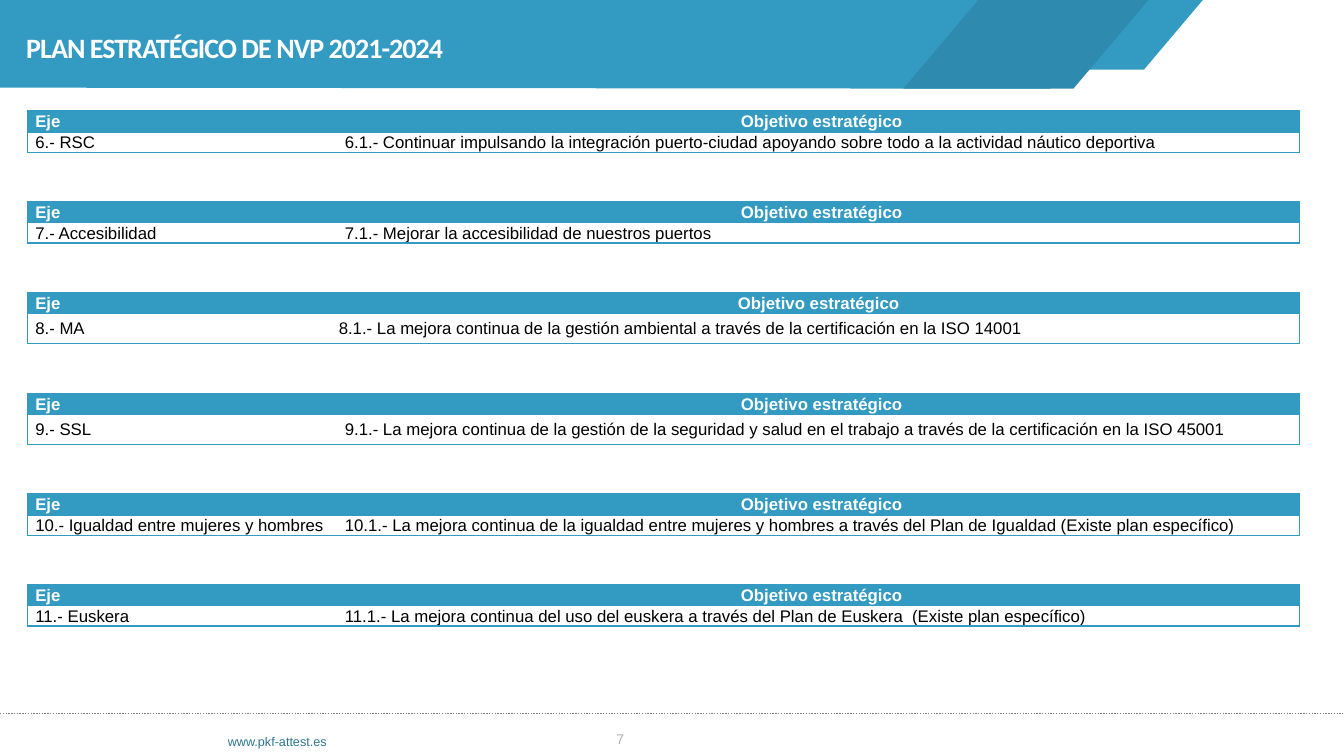
from lxml import etree
from pptx import Presentation
from pptx import util as u
from pptx.dml.color import RGBColor
from pptx.enum import dml, shapes, text
from pptx.oxml import ns

Inches = u.Inches
BLUE, DARK_BLUE, WHITE, BLACK = "339AC1", "2F8AAF", "FFFFFF", "000000"


def paint(fill, color):
    fill.solid()
    fill.fore_color.rgb = RGBColor.from_string(color)


def write(frame, words, color, align="LEFT", **font):
    para = frame.paragraphs[0]
    para.alignment = getattr(text.PP_ALIGN, align)
    span = para.add_run()
    span.text = words
    for key, value in font.items():
        setattr(span.font, key, value)
    paint(span.font.fill, color)
    return span


deck = Presentation()
deck.slide_width, deck.slide_height = Inches(13.33), Inches(7.5)
page = deck.slides.add_slide(deck.slide_layouts[5])

# Header band
builder = page.shapes.build_freeform(Inches(11.39), 0)
corners = [(10.41, 0.88), (-0.01, 0.87), (0, 0)]
builder.add_line_segments([(Inches(x), Inches(y)) for x, y in corners])
header = [(builder.convert_to_shape(), BLUE)]
for left, height, color in [(9.5, 0.69, BLUE), (8.96, 0.88, DARK_BLUE)]:
    slant = page.shapes.add_shape(shapes.MSO_SHAPE.PARALLELOGRAM, Inches(left), 0,
                                  Inches(2.43), Inches(height))
    slant.adjustments[0] = 0.845
    header.append((slant, color))
for shape, color in header:
    shape.shadow.inherit = False
    paint(shape.fill, color)
    shape.line.fill.background()

# Title, brought in front of the band
title = page.shapes.title
page.shapes._spTree.append(title._element)
title.left, title.top = Inches(0.26), Inches(0.17)
title.width, title.height = Inches(12), Inches(0.7)
span = write(title.text_frame, "PLAN ESTRATÉGICO DE NVP 2021-2024", WHITE,
             name="Calibri", size=u.Pt(20), bold=True)
span._r.get_or_add_rPr().set("spc", "-70")
title.text_frame.paragraphs[0].line_spacing = u.Pt(33.4)
frames = [title.text_frame]

# Footer
rule = page.shapes.add_connector(shapes.MSO_CONNECTOR.STRAIGHT, 0, Inches(7.08),
                                 Inches(13.33), Inches(7.08))
paint(rule.line.fill, "808080")
rule.line.width = u.Pt(1)
rule.line.dash_style = dml.MSO_LINE.ROUND_DOT
etree.SubElement(rule._element.spPr, ns.qn("a:effectLst"))

footers = [
    ("www.pkf-attest.es", (2.26, 7.28, 2.91, 0.15), 9, "2C7691", "LEFT"),
    ("7", (4.61, 7.25, 1.58, 0.39), 10, "B1B1B1", "RIGHT"),
]
for words, place, size, color, align in footers:
    box = page.shapes.add_textbox(*map(Inches, place))
    write(box.text_frame, words, color, align, name="Arial", size=u.Pt(size))
    frames.append(box.text_frame)

frame_format = {
    "margin_left": 0, "margin_right": 0, "margin_top": 0, "margin_bottom": 0,
    "word_wrap": True, "auto_size": text.MSO_AUTO_SIZE.NONE,
    "vertical_anchor": text.MSO_ANCHOR.TOP,
}
for frame in frames:
    for key, value in frame_format.items():
        setattr(frame, key, value)

# One table per axis: name, objective, first column width, body row height
axes = [
    ("6.- RSC", "6.1.- Continuar impulsando la integración puerto-ciudad apoyando "
     "sobre todo a la actividad náutico deportiva", 3.07, 0.2),
    ("7.- Accesibilidad", "7.1.- Mejorar la accesibilidad de nuestros puertos", 3.07, 0.2),
    ("8.- MA", "8.1.- La mejora continua de la gestión ambiental a través de la "
     "certificación en la ISO 14001", 3.01, 0.3),
    ("9.- SSL", "9.1.- La mejora continua de la gestión de la seguridad y salud en el "
     "trabajo a través de la certificación en la ISO 45001", 3.07, 0.3),
    ("10.- Igualdad entre mujeres y hombres", "10.1.- La mejora continua de la igualdad "
     "entre mujeres y hombres a través del Plan de Igualdad (Existe plan específico)",
     3.07, 0.2),
    ("11.- Euskera", "11.1.- La mejora continua del uso del euskera a través del Plan de "
     "Euskera  (Existe plan específico)", 3.07, 0.2),
]
table_width, head_height, gap = 12.62, 0.21, 0.49
cell_format = {
    "margin_left": Inches(0.08), "margin_right": Inches(0.01),
    "margin_top": Inches(0.01), "margin_bottom": 0,
    "vertical_anchor": text.MSO_ANCHOR.MIDDLE,
}
top = 1.1
for axis, goal, first_width, body_height in axes:
    height = head_height + body_height
    table = page.shapes.add_table(2, 2, Inches(0.27), Inches(top),
                                  Inches(table_width), Inches(height)).table
    table.horz_banding = False
    for c, width in enumerate([first_width, table_width - first_width]):
        table.columns[c].width = Inches(width)
    for r, row_height in enumerate([head_height, body_height]):
        table.rows[r].height = Inches(row_height)
    for r, row in enumerate([("Eje", "Objetivo estratégico"), (axis, goal)]):
        for c, words in enumerate(row):
            cell = table.cell(r, c)
            is_head = r == 0
            for key, value in cell_format.items():
                setattr(cell, key, value)
            paint(cell.fill, BLUE if is_head else WHITE)
            write(cell.text_frame, words, WHITE if is_head else BLACK,
                  "CENTER" if is_head and c == 1 else "LEFT",
                  name="Arial", size=u.Pt(12), bold=is_head)
            # Borders all round except between the columns
            inner_side = "R" if c == 0 else "L"
            for position, side in enumerate("LRTB"):
                edge = etree.Element(ns.qn(f"a:ln{side}"), w=str(u.Pt(1)))
                if side == inner_side:
                    etree.SubElement(edge, ns.qn("a:noFill"))
                else:
                    solid = etree.SubElement(edge, ns.qn("a:solidFill"))
                    etree.SubElement(solid, ns.qn("a:srgbClr"), val=BLUE)
                cell._tc.get_or_add_tcPr().insert(position, edge)
    top += height + gap

deck.save("out.pptx")
